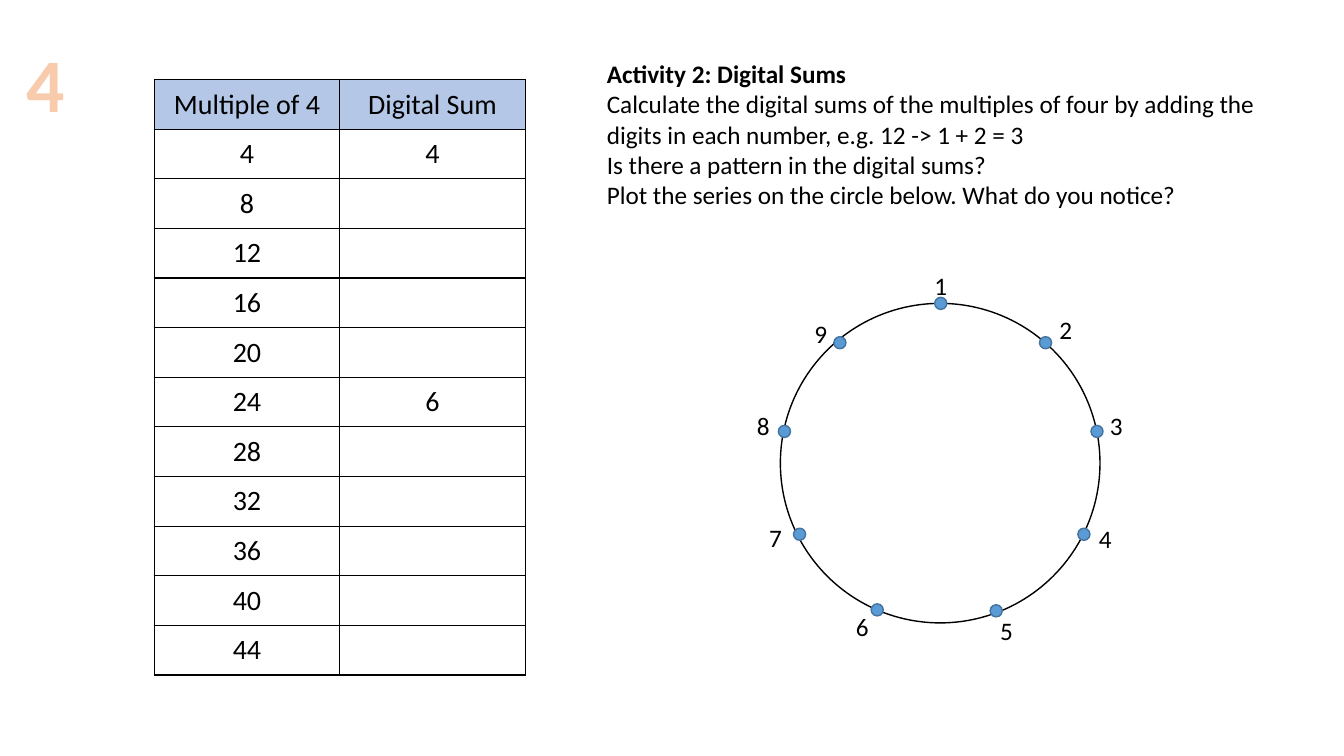
from lxml.etree import SubElement
from pptx import Presentation
from pptx.dml.color import RGBColor
from pptx.enum.shapes import MSO_SHAPE
from pptx.enum.text import MSO_ANCHOR, MSO_AUTO_SIZE, PP_ALIGN
from pptx.oxml import parse_xml
from pptx.oxml.ns import nsdecls, qn
from pptx.util import Inches, Pt

COLORS = {
    "text": "000000",
    "header": "B4C7E7",
    "dot": "5B9BD5",
    "dot line": "43739E",
    "number": "F8CBAD",
    "number line": "ED7D31",
}


def write(paragraph, text, size, color="text", bold=False):
    """Add one formatted run to the paragraph and return it."""
    run = paragraph.add_run()
    run.text = text
    for name, value in {"name": "Calibri", "size": Pt(size), "bold": bold}.items():
        setattr(run.font, name, value)
    run.font.color.rgb = RGBColor.from_string(COLORS[color])
    return run


def add_circle(shapes, left, top, diameter, line_color, fill_color=None):
    circle = shapes.add_shape(
        MSO_SHAPE.OVAL, Inches(left), Inches(top), Inches(diameter), Inches(diameter)
    )
    circle.shadow.inherit = False
    circle.line.color.rgb = RGBColor.from_string(COLORS[line_color])
    circle.line.width = Pt(1)
    if fill_color:
        circle.fill.solid()
        circle.fill.fore_color.rgb = RGBColor.from_string(COLORS[fill_color])
    else:
        circle.fill.background()


presentation = Presentation()
presentation.slide_width = Inches(13.33)
presentation.slide_height = Inches(7.5)
slide = presentation.slides.add_slide(presentation.slide_layouts[5])

# Multiplication table number
title = slide.shapes.title
title.left, title.top = Inches(0.16), Inches(0.31)
title.width, title.height = Inches(0.59), Inches(1.01)
title.text_frame.word_wrap = False
title.text_frame.auto_size = MSO_AUTO_SIZE.SHAPE_TO_FIT_TEXT
title_paragraph = title.text_frame.paragraphs[0]
title_paragraph.alignment = PP_ALIGN.CENTER
number = write(title_paragraph, "4", 54, "number", bold=True)
outline = parse_xml(
    f'<a:ln {nsdecls("a")} w="{Pt(1.75)}"><a:solidFill>'
    f'<a:srgbClr val="{COLORS["number line"]}"/></a:solidFill></a:ln>'
)
number.font._element.insert(0, outline)

# Table of multiples
digital_sums = {4: "4", 24: "6"}
rows = [("Multiple of 4", "Digital Sum")]
rows += [(str(n), digital_sums.get(n, "")) for n in range(4, 45, 4)]
table = slide.shapes.add_table(
    len(rows), 2, Inches(1.53), Inches(0.79), Inches(3.68), Inches(5.91)
).table
table.first_row = False
table.horz_banding = False
for row_index, texts in enumerate(rows):
    for column_index, text in enumerate(texts):
        cell = table.cell(row_index, column_index)
        cell.vertical_anchor = MSO_ANCHOR.MIDDLE
        paragraph = cell.text_frame.paragraphs[0]
        paragraph.alignment = PP_ALIGN.CENTER
        if text:
            write(paragraph, text, 20)
        properties = cell._tc.get_or_add_tcPr()
        for side in ("lnL", "lnR", "lnT", "lnB"):
            border = SubElement(properties, qn(f"a:{side}"), w=str(Pt(1)))
            border_fill = SubElement(border, qn("a:solidFill"))
            SubElement(border_fill, qn("a:srgbClr"), val=COLORS["text"])
        if row_index == 0:
            cell.fill.solid()
            cell.fill.fore_color.rgb = RGBColor.from_string(COLORS["header"])
        else:
            cell.fill.background()

# Instructions
instructions = [
    "Activity 2: Digital Sums",
    "Calculate the digital sums of the multiples of four by adding the digits "
    "in each number, e.g. 12 -> 1 + 2 = 3",
    "Is there a pattern in the digital sums?",
    "Plot the series on the circle below. What do you notice?",
]
text_box = slide.shapes.add_textbox(Inches(5.92), Inches(0.53), Inches(7.22), Inches(1.62))
frame = text_box.text_frame
frame.word_wrap = True
frame.auto_size = MSO_AUTO_SIZE.SHAPE_TO_FIT_TEXT
for index, text in enumerate(instructions):
    paragraph = frame.add_paragraph() if index else frame.paragraphs[0]
    write(paragraph, text, 18, bold=index == 0)

# Circle with nine points: top left of each dot, then of its label
points = [
    ((9.27, 2.95), (9.17, 2.63)),
    ((10.31, 3.34), (10.41, 3.07)),
    ((10.82, 4.22), (10.91, 4.02)),
    ((10.69, 5.24), (10.8, 5.14)),
    ((9.82, 6), (9.82, 6.06)),
    ((8.64, 5.99), (8.39, 6.02)),
    ((7.87, 5.24), (7.53, 5.13)),
    ((7.72, 4.22), (7.41, 4.02)),
    ((8.27, 3.34), (7.98, 3.11)),
]
circle_shapes = slide.shapes.add_group_shape().shapes
add_circle(circle_shapes, 7.74, 3.01, 3.17, "text")
for digit, (dot, label) in enumerate(points, start=1):
    add_circle(circle_shapes, *dot, 0.12, "dot line", "dot")
    label_box = circle_shapes.add_textbox(
        Inches(label[0]), Inches(label[1]), Inches(0.33), Inches(0.4)
    )
    label_box.text_frame.word_wrap = False
    label_box.text_frame.auto_size = MSO_AUTO_SIZE.SHAPE_TO_FIT_TEXT
    write(label_box.text_frame.paragraphs[0], str(digit), 18)

presentation.save("out.pptx")
